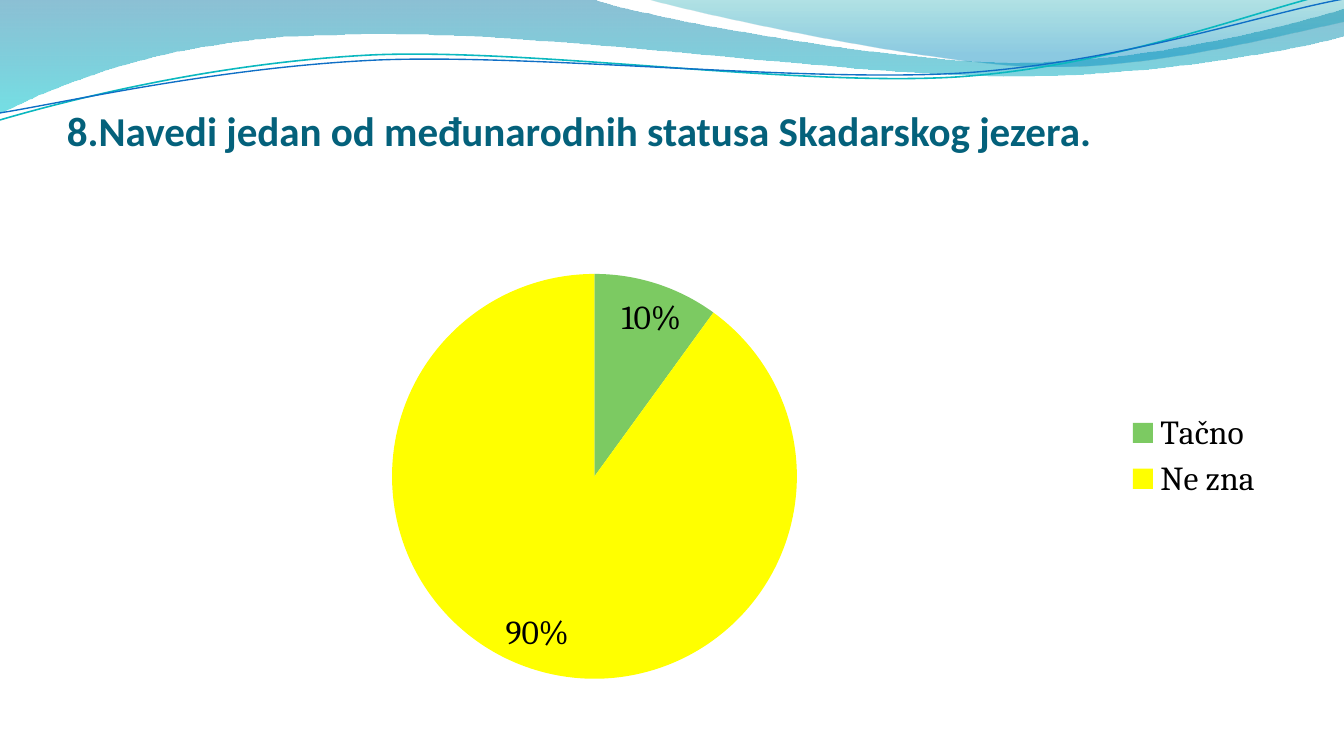
from pptx import Presentation
from pptx.chart.data import CategoryChartData
from pptx.dml.color import RGBColor
from pptx.enum.chart import XL_CHART_TYPE, XL_LABEL_POSITION, XL_LEGEND_POSITION
from pptx.enum.text import MSO_ANCHOR, PP_ALIGN
from pptx.oxml import parse_xml
from pptx.oxml.ns import nsdecls, qn
from pptx.util import Pt

PIE = XL_CHART_TYPE.PIE
BEST_FIT = XL_LABEL_POSITION.BEST_FIT
RIGHT = XL_LEGEND_POSITION.RIGHT
BOTTOM = MSO_ANCHOR.BOTTOM
LEFT = PP_ALIGN.LEFT
EMU_PER_PX = 914400 / 134.4

BACK_WAVE = [
    (0, 0), (591, -1),
    (640, 17, 892, 63, 1019, 63), (1146, 63, 1288, 26, 1344, 9),
    (1345, 36),
    (1321, 44, 1169, 77, 1003, 77), (836, 75, 513, 28, 345, 35),
    (173, 36, 62, 83, -1, 114),
]
FRONT_WAVE = [
    (644, -1),
    (684, 11, 917, 62, 1034, 66), (1150, 70, 1292, 32, 1344, 22),
    (1344, 0),
]
TEAL_LINE = [
    (0, 120), (65, 101, 212, 63, 372, 55),
    (532, 48, 796, 87, 957, 77), (1120, 66, 1262, 8, 1341, -9),
]
BLUE_LINE = [
    (0, 113), (63, 103, 220, 67, 380, 60),
    (542, 54, 802, 83, 964, 73), (1124, 62, 1265, 13, 1344, -1),
]


def px(n):
    return round(n * EMU_PER_PX)


def rgb(color):
    return RGBColor.from_string(color)


class Deck:
    """Holds the style and the current slide, with a method for each kind of element."""

    title_font, title_color = "Calibri", "04617B"
    chart_font, chart_color = "Cambria", "000000"

    def __init__(self, width, height):
        self.prs = Presentation()
        self.prs.slide_width, self.prs.slide_height = px(width), px(height)
        self.s = self.prs.slides.add_slide(self.prs.slide_layouts[5])

    def outline(self, path, close):
        ends = [(px(step[-2]), px(step[-1])) for step in path]
        builder = self.s.shapes.build_freeform(*ends[0])
        builder.add_line_segments(ends[1:], close=close)
        sp = builder.convert_to_shape()
        sp.shadow.inherit = False
        lines = list(sp._element.iter(qn("a:lnTo")))
        for line, step in zip(lines, path[1:]):
            if len(step) == 6:
                points = "".join(
                    f'<a:pt x="{px(x) - sp.left}" y="{px(y) - sp.top}"/>'
                    for x, y in zip(step[::2], step[1::2]))
                bezier = f'<a:cubicBezTo {nsdecls("a")}>{points}</a:cubicBezTo>'
                line.getparent().replace(line, parse_xml(bezier))
        return sp

    def wave(self, path, stops):
        sp = self.outline(path, True)
        sp.line.fill.background()
        sp.fill.gradient()
        sp.fill.gradient_angle = 270
        for stop, (position, color, opacity) in zip(sp.fill.gradient_stops, stops):
            stop.position = position
            stop.color.rgb = rgb(color)
        colors = sp._element.spPr.find(qn("a:gradFill")).iter(qn("a:srgbClr"))
        for clr, (position, color, opacity) in zip(colors, stops):
            clr.append(parse_xml(f'<a:alpha {nsdecls("a")} val="{opacity * 1000}"/>'))

    def curve(self, path, color, width):
        sp = self.outline(path, False)
        sp.fill.background()
        sp.line.color.rgb = rgb(color)
        sp.line.width = Pt(width)

    def title(self, text, x, y, w, h, size):
        sp = self.s.shapes.title
        sp.left, sp.top, sp.width, sp.height = px(x), px(y), px(w), px(h)
        tf = sp.text_frame
        tf.text = text
        tf.word_wrap = True
        tf.vertical_anchor = BOTTOM
        tf.margin_left = tf.margin_right = 0
        tf.margin_top, tf.margin_bottom = px(7), px(49)
        p = tf.paragraphs[0]
        p.alignment = LEFT
        p.font.name, p.font.size, p.font.bold = self.title_font, Pt(size), True
        p.font.color.rgb = rgb(self.title_color)

    def pie(self, shares, x, y, w, h, size, pie_x, pie_y, diameter):
        data = CategoryChartData()
        data.categories = [name for name, value, color in shares]
        data.add_series("Series 1", [value for name, value, color in shares])
        chart = self.s.shapes.add_chart(PIE, px(x), px(y), px(w), px(h), data).chart
        chart.has_title = False
        chart.font.name, chart.font.size = self.chart_font, Pt(size)
        chart.font.color.rgb = rgb(self.chart_color)
        chart.has_legend = True
        chart.legend.position = RIGHT
        chart.legend.include_in_layout = False
        plot = chart.plots[0]
        plot.vary_by_categories = True
        for i, (name, value, color) in enumerate(shares):
            fill = plot.series[0].points[i].format.fill
            fill.solid()
            fill.fore_color.rgb = rgb(color)
        plot.has_data_labels = True
        labels = plot.data_labels
        labels.show_percentage, labels.show_value = True, False
        labels.number_format, labels.number_format_is_linked = "0%", False
        labels.position = BEST_FIT
        area = chart._chartSpace.chart.plotArea
        for old in area.findall(qn("c:layout")):
            area.remove(old)
        box = ((pie_x - x) / w, (pie_y - y) / h, diameter / w, diameter / h)
        sizes = "".join(f'<c:{k} val="{v}"/>' for k, v in zip("xywh", box))
        area.insert(0, parse_xml(
            f'<c:layout {nsdecls("c")}><c:manualLayout><c:layoutTarget val="inner"/>'
            f'<c:xMode val="edge"/><c:yMode val="edge"/>{sizes}'
            '</c:manualLayout></c:layout>'))


def main():
    deck = Deck(1344, 756)
    deck.wave(BACK_WAVE, [(0, "0074A1", 45), (1, "00C6CF", 55)])
    deck.wave(FRONT_WAVE, [(0, "00A1A9", 30), (0.8, "008BBF", 45)])
    deck.curve(TEAL_LINE, "0AB8BF", 0.85)
    deck.curve(BLUE_LINE, "0F6FC6", 0.75)
    deck.title("8.Navedi jedan od međunarodnih statusa Skadarskog jezera.",
               67, 78, 1210, 126, 22)
    deck.pie([("Tačno", 10, "7CCA62"), ("Ne zna", 90, "FFFF00")],
             67, 214, 1210, 484, 18, 392, 274, 405)
    deck.prs.save("out.pptx")


if __name__ == "__main__":
    main()
